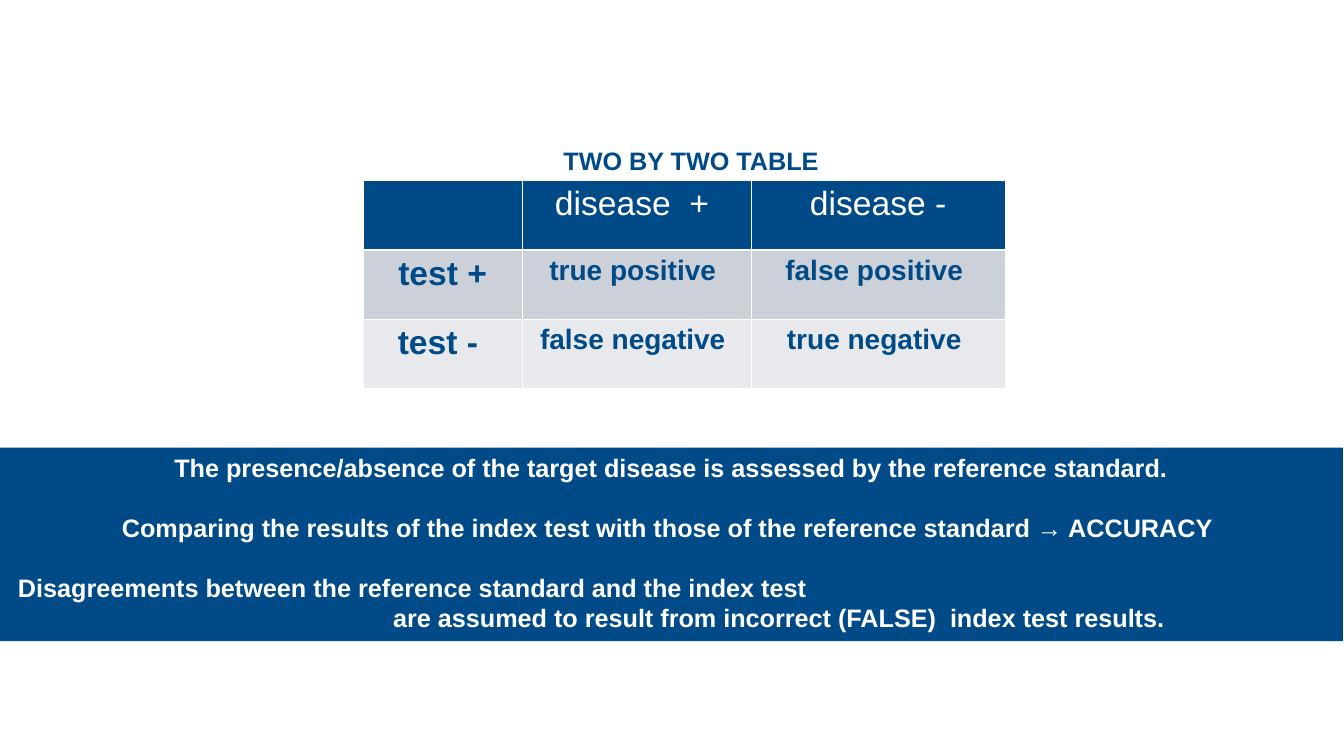
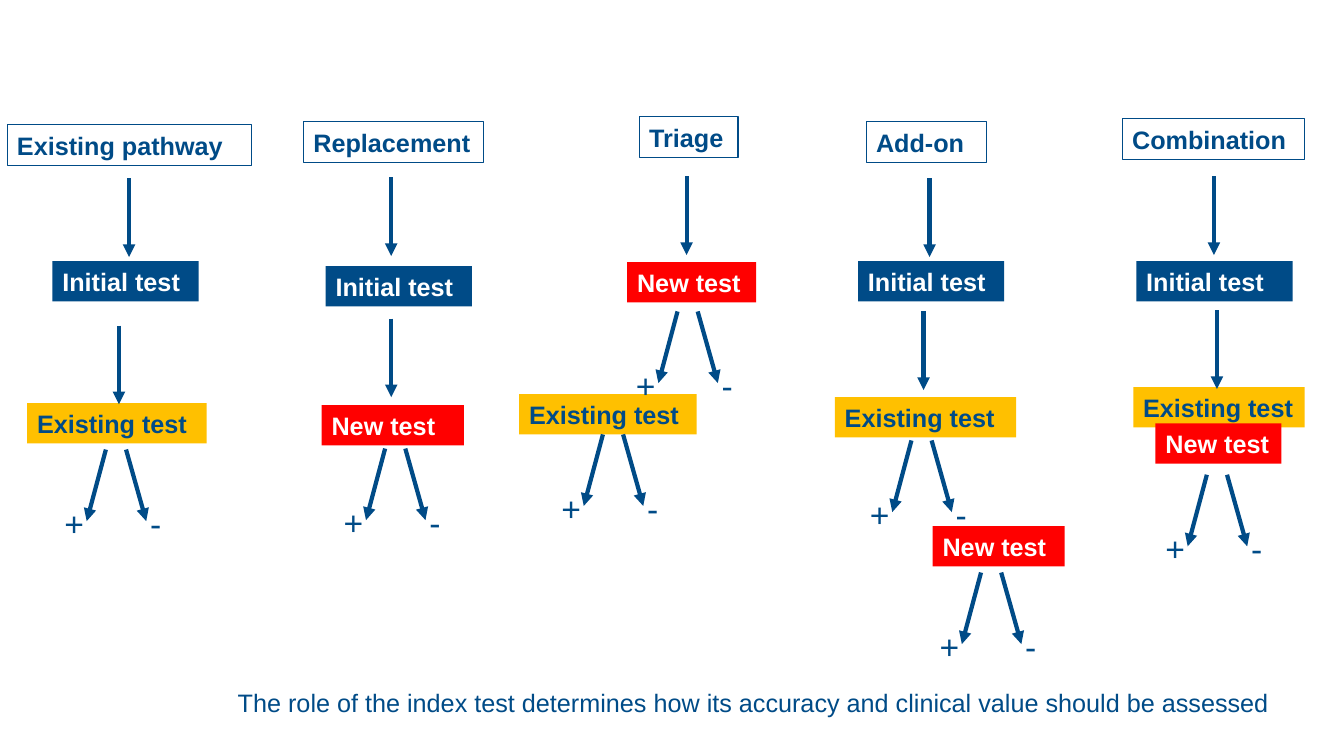
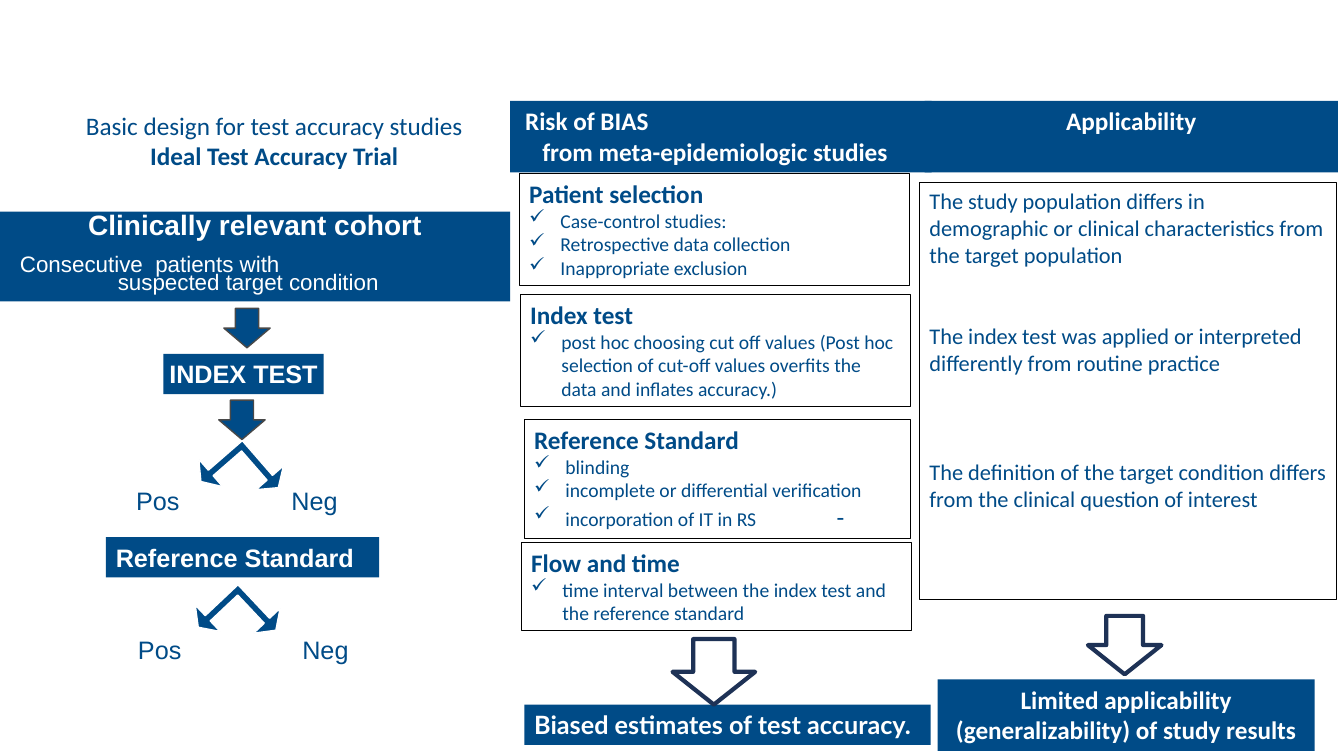
from lxml import etree
from pptx import Presentation
from pptx.dml.color import RGBColor
from pptx.enum.shapes import MSO_CONNECTOR, MSO_SHAPE
from pptx.enum.text import MSO_ANCHOR, MSO_AUTO_SIZE, PP_ALIGN
from pptx.oxml.ns import qn
from pptx.util import Inches, Pt

RECTANGLE = MSO_SHAPE.RECTANGLE
DOWN_ARROW = MSO_SHAPE.DOWN_ARROW
FORK_ARROW = MSO_SHAPE.LEFT_UP_ARROW
STRAIGHT = MSO_CONNECTOR.STRAIGHT
TOP = MSO_ANCHOR.TOP
GROW = MSO_AUTO_SIZE.SHAPE_TO_FIT_TEXT
LEFT, CENTER = PP_ALIGN.LEFT, PP_ALIGN.CENTER

HEX = {
    "blue": "004B87", "white": "FFFFFF", "amber": "FFC000", "red": "FF0000",
    "black": "000000", "grey": "484848", "navy": "1E3256",
    "row_dark": "CCD0D9", "row_light": "E7E9ED",
}
COLOR = {name: RGBColor.from_string(value) for name, value in HEX.items()}


def add_text(slide, at, lines, fill=None, line=None, color="blue", font="Arial",
             size=18, bold=False, align=LEFT, inset=0.1):
    frame_at = [Inches(value) for value in at]
    if fill or line:
        box = slide.shapes.add_shape(RECTANGLE, *frame_at)
        box.shadow.inherit = False
        if fill:
            box.fill.solid()
            box.fill.fore_color.rgb = COLOR[fill]
        else:
            box.fill.background()
        if line:
            box.line.color.rgb = COLOR[line]
            box.line.width = Pt(0.75)
        else:
            box.line.fill.background()
    else:
        box = slide.shapes.add_textbox(*frame_at)
    frame = box.text_frame
    frame.word_wrap = True
    frame.auto_size = GROW
    frame.vertical_anchor = TOP
    frame.margin_left = frame.margin_right = Inches(inset)
    frame.margin_top = frame.margin_bottom = Inches(0.05)
    for number, entry in enumerate(lines):
        entry = {"text": entry} if isinstance(entry, str) else entry
        paragraph = frame.add_paragraph() if number else frame.paragraphs[0]
        properties = paragraph._p.get_or_add_pPr()
        if "left" in entry:
            properties.set("marL", str(Inches(entry["left"])))
        if entry.get("check"):
            properties.set("marL", str(Inches(0.31)))
            properties.set("indent", str(Inches(-0.31)))
            etree.SubElement(properties, qn("a:buChar")).set("char", "✓")
        if "tab" in entry:
            stops = etree.SubElement(properties, qn("a:tabLst"))
            stop = etree.SubElement(stops, qn("a:tab"))
            stop.set("pos", str(Inches(entry["tab"])))
            stop.set("algn", "l")
        paragraph.alignment = entry.get("align", align)
        if "before" in entry:
            paragraph.space_before = Pt(entry["before"])
        if "spacing" in entry:
            paragraph.line_spacing = entry["spacing"]
        line_size = entry.get("size", size)
        for text, run_size in [(entry["text"], line_size)] + entry.get("more", []):
            run = paragraph.add_run()
            run.text = text
            run.font.name = font
            run.font.size = Pt(run_size)
            run.font.bold = entry.get("bold", bold)
            run.font.color.rgb = COLOR[color]


def add_arrow(slide, x1, y1, x2, y2):
    arrow = slide.shapes.add_connector(
        STRAIGHT, Inches(x1), Inches(y1), Inches(x2), Inches(y2))
    arrow.line.color.rgb = COLOR["blue"]
    arrow.line.width = Pt(3)
    etree.SubElement(arrow.line._get_or_add_ln(), qn("a:tailEnd")).set("type", "triangle")
    etree.SubElement(arrow._element.spPr, qn("a:effectLst"))


deck = Presentation()
deck.slide_width, deck.slide_height = Inches(13.33), Inches(7.5)
blank = deck.slide_layouts[6]

accuracy = deck.slides.add_slide(blank)
add_text(accuracy, (-0.01, 4.44, 13.33, 1.92), [
    "The presence/absence of the target disease is assessed by the reference standard.",
    {"text": "Comparing the results of the index test with those of the reference standard "
             "→ ACCURACY ", "before": 21},
    {"text": "Disagreements between the reference standard and the index test",
     "before": 21, "align": LEFT, "left": 0.09},
    {"text": "are assumed to result from incorrect (FALSE)  index test results.",
     "align": LEFT, "left": 3.81},
], fill="blue", color="white", bold=True, align=CENTER)

outcomes = [
    ("blue", ["", "disease  + ", "disease -"]),
    ("row_dark", ["test +", "true positive ", "false positive "]),
    ("row_light", ["test - ", "false negative ", "true negative "]),
]
two_by_two = accuracy.shapes.add_table(
    3, 3, Inches(3.6), Inches(1.79), Inches(6.37), Inches(2.07)).table
for column, width in zip(two_by_two.columns, (1.58, 2.27, 2.52)):
    column.width = Inches(width)
for r, (row_fill, texts) in enumerate(outcomes):
    two_by_two.rows[r].height = Inches(0.69)
    for c, text in enumerate(texts):
        cell = two_by_two.cell(r, c)
        cell.fill.solid()
        cell.fill.fore_color.rgb = COLOR[row_fill]
        if text:
            paragraph = cell.text_frame.paragraphs[0]
            paragraph.alignment = CENTER
            run = paragraph.add_run()
            run.text = text
            run.font.name = "Arial"
            run.font.size = Pt(20 if r and c else 24)
            run.font.bold = r > 0
            run.font.color.rgb = COLOR["blue" if r else "white"]
add_text(accuracy, (5.06, 1.39, 3.66, 0.4), ["TWO BY TWO TABLE "], bold=True, align=CENTER)

roles = deck.slides.add_slide(blank)
test_styles = {
    "Initial test": ("blue", "white"),
    "Existing test": ("amber", "blue"),
    "New test": ("red", "white"),
}
pathways = [
    {"role": "Existing pathway", "at": (0.07, 1.24, 2.42),
     "tests": [("Initial test", 0.52, 2.59, 1.45), ("Existing test", 0.27, 4, 1.78)],
     "steps": [(1.28, 1.77), (1.18, 3.23)], "forks": [(1.05, 4.46)]},
    {"role": "Replacement", "at": (3.01, 1.21, 1.79),
     "tests": [("Initial test", 3.23, 2.64, 1.45), ("New test", 3.19, 4.02, 1.41)],
     "steps": [(3.88, 1.76), (3.88, 3.16)], "forks": [(3.82, 4.45)]},
    {"role": "Triage", "at": (6.34, 1.16, 0.98),
     "tests": [("New test", 6.22, 2.6, 1.28), ("Existing test", 5.15, 3.91, 1.76)],
     "steps": [(6.81, 1.75)], "forks": [(5.98, 4.31), (6.72, 3.09)]},
    {"role": "Add-on", "at": (8.59, 1.21, 1.19),
     "tests": [("Initial test", 8.51, 2.59, 1.45), ("Existing test", 8.28, 3.94, 1.8),
               ("New test", 9.25, 5.22, 1.31)],
     "steps": [(9.22, 1.77), (9.16, 3.09)], "forks": [(9.04, 4.37), (9.73, 5.68)]},
    {"role": "Combination", "at": (11.13, 1.18, 1.81),
     "tests": [("Initial test", 11.27, 2.59, 1.55), ("Existing test", 11.24, 3.84, 1.7),
               ("New test", 11.46, 4.2, 1.25)],
     "steps": [(12.04, 1.75), (12.07, 3.08)], "forks": [(11.97, 4.71)]},
]
for pathway in pathways:
    add_text(roles, (*pathway["at"], 0.4), [pathway["role"]],
             fill="white", line="blue", bold=True)
    for test, x, y, width in pathway["tests"]:
        test_fill, test_color = test_styles[test]
        add_text(roles, (x, y, width, 0.4), [test],
                 fill=test_fill, color=test_color, bold=True)
    for x, y in pathway["steps"]:
        add_arrow(roles, x, y, x, y + 0.78)
    for x, y in pathway["forks"]:
        add_arrow(roles, x, y, x - 0.19, y + 0.71)
        add_arrow(roles, x + 0.2, y, x + 0.4, y + 0.71)
        add_text(roles, (x - 0.51, y + 0.48, 1.16, 0.5),
                 [{"text": "+\t-", "tab": 0.85}], size=24)
add_text(roles, (2.26, 6.77, 10.64, 0.4), [
    "The role of the index test determines how its accuracy and clinical value "
    "should be assessed"])

design = deck.slides.add_slide(blank)
add_text(design, (0.12, 1.04, 5.2, 0.71), [
    "Basic design for test accuracy studies",
    {"text": "Ideal Test Accuracy Trial", "bold": True},
], font="Calibri", align=CENTER)
add_text(design, (0, 2.1, 5.06, 0.89), [
    {"text": "Clinically relevant cohort", "size": 20, "bold": True,
     "align": CENTER, "spacing": 0.7},
    {"text": "Consecutive  patients with", "left": 0.1, "spacing": 0.7, "before": 12},
    {"text": "suspected target condition", "left": 1.07, "spacing": 0.7},
], fill="blue", color="white", size=16)
add_text(design, (1.62, 3.51, 1.59, 0.4), ["INDEX TEST"], fill="blue", color="white",
         bold=True, align=CENTER, inset=0.05)
add_text(design, (1.05, 5.33, 2.71, 0.4), ["Reference Standard"],
         fill="blue", color="white", bold=True)
add_text(design, (1.3, 4.77, 2.28, 0.4), [{"text": "Pos\tNeg", "tab": 1.54}], inset=0.05)
add_text(design, (1.27, 6.24, 2.39, 0.4), [{"text": "Pos\tNeg", "tab": 1.63}])

add_text(design, (5.06, 1, 4.18, 0.71), [
    {"text": "Risk of BIAS", "left": 0.05},
    {"text": "from meta-epidemiologic studies", "left": 0.22},
], fill="blue", color="white", font="Calibri", bold=True)
bias_domains = [
    ((5.15, 1.72, 3.87, 1.11), "Patient selection", [
        {"text": "Case-control studies:"},
        {"text": "Retrospective data collection"},
        {"text": "Inappropriate exclusion"}]),
    ((5.16, 2.92, 3.87, 1.11), "Index test", [
        {"text": "post hoc choosing cut off values (Post hoc selection of cut-off "
                 "values overfits the data and inflates accuracy.)"}]),
    ((5.2, 4.16, 3.83, 1.18), "Reference Standard", [
        {"text": "blinding"},
        {"text": "incomplete or differential verification"},
        {"text": "incorporation of IT in RS", "tab": 3, "more": [("\t-", 18)]}]),
    ((5.17, 5.38, 3.87, 0.88), "Flow and time", [
        {"text": "time interval between the index test and the reference standard"}]),
]
for at, domain, concerns in bias_domains:
    add_text(design, at, [{"text": domain, "bold": True, "size": 18}]
             + [{**concern, "check": True} for concern in concerns],
             line="black", font="Calibri", size=14)
add_text(design, (5.2, 6.99, 4.03, 0.4), ["Biased estimates of test accuracy."],
         fill="blue", color="white", font="Lato", bold=True)

add_text(design, (9.3, 6.74, 3.74, 0.71),
         ["Limited applicability (generalizability) of study results"],
         fill="blue", color="white", font="Calibri", bold=True, align=CENTER)
add_text(design, (9.12, 1.81, 4.14, 4.14), [
    "The study population differs in demographic or clinical characteristics from "
    "the target population",
    {"text": "The index test was applied or interpreted differently from routine practice",
     "before": 39},
    {"text": "The definition of the target condition differs from the clinical question "
             "of interest", "before": 58.5},
], line="black", font="Calibri", size=16)
add_text(design, (9.17, 1, 4.1, 0.71), ["Applicability"],
         fill="blue", color="white", font="Calibri", bold=True, align=CENTER)

flow_arrows = [
    (DOWN_ARROW, (2.22, 3.06, 0.46, 0.39), 0, "blue", "grey", 1),
    (DOWN_ARROW, (2.17, 3.97, 0.46, 0.39), 0, "blue", "grey", 1),
    (FORK_ARROW, (2.02, 4.32, 0.73, 0.72), 229, "blue", "white", 1),
    (FORK_ARROW, (1.99, 5.75, 0.73, 0.72), 226.7, "blue", "white", 1),
    (DOWN_ARROW, (6.67, 6.34, 0.82, 0.65), 0, "white", "navy", 3),
    (DOWN_ARROW, (10.79, 6.11, 0.73, 0.58), 0, "white", "navy", 3),
]
for preset, at, rotation, fill, outline, weight in flow_arrows:
    arrow = design.shapes.add_shape(preset, *[Inches(value) for value in at])
    arrow.shadow.inherit = False
    arrow.rotation = rotation
    arrow.fill.solid()
    arrow.fill.fore_color.rgb = COLOR[fill]
    arrow.line.color.rgb = COLOR[outline]
    arrow.line.width = Pt(weight)
    if preset == FORK_ARROW:
        for index, ratio in enumerate((0.1, 0.25, 0.18)):
            arrow.adjustments[index] = ratio

deck.save("out.pptx")
